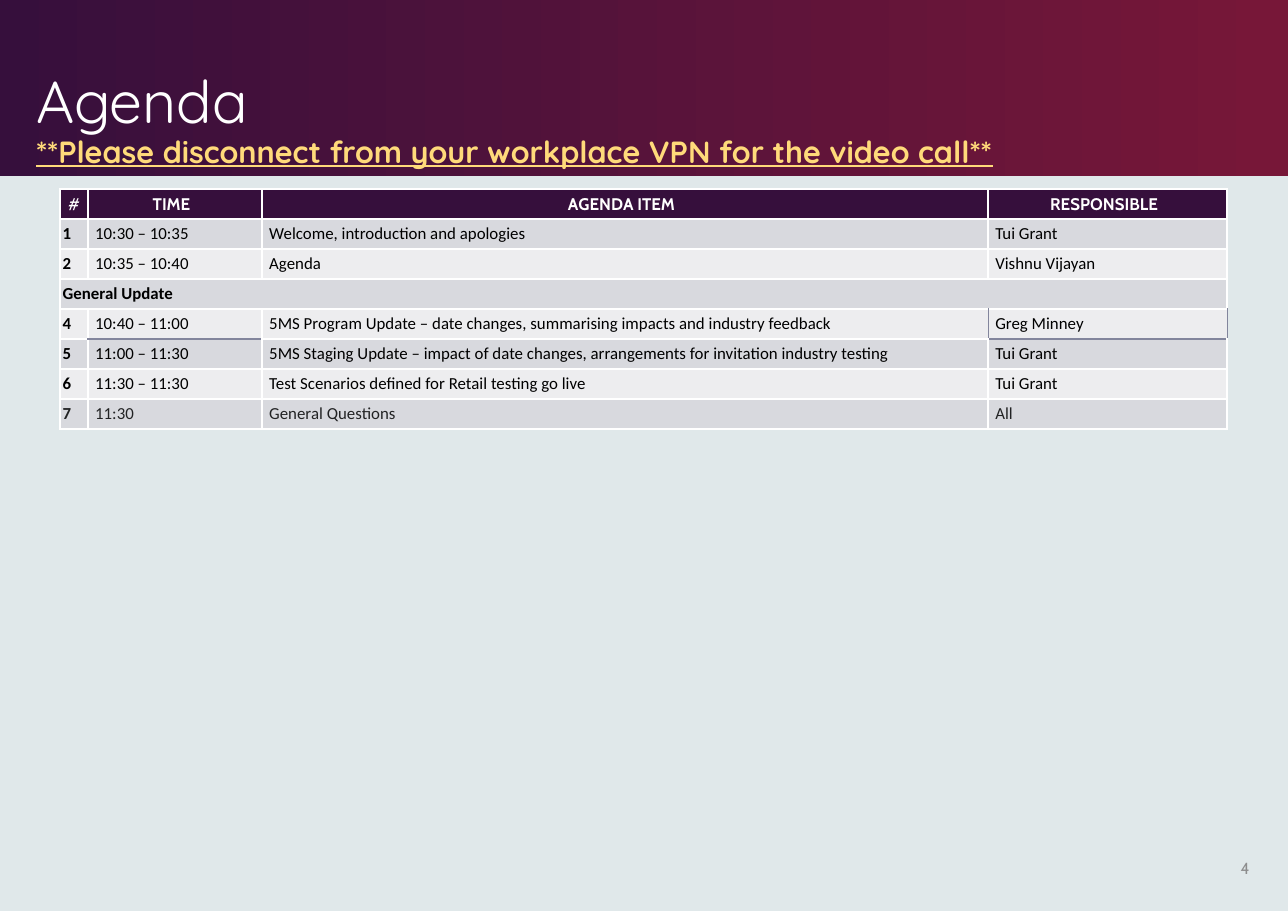
from dataclasses import dataclass

from lxml.etree import SubElement
from pptx import Presentation
from pptx.dml.color import RGBColor
from pptx.enum.shapes import MSO_SHAPE
from pptx.enum.text import MSO_ANCHOR, PP_ALIGN
from pptx.oxml.ns import qn
from pptx.util import Pt


@dataclass(frozen=True)
class Theme:
    background: str = "E0E8EA"
    plum: str = "360F3C"
    wine: str = "771738"
    white: str = "FFFFFF"
    gold: str = "FFDA7A"
    black: str = "000000"
    charcoal: str = "222324"
    page_grey: str = "8D8D8E"
    rule_grey: str = "82859C"
    band_dark: str = "D8D9DE"
    band_light: str = "EDEDEF"
    heading_font: str = "Quicksand"
    label_font: str = "Cabin"
    body_font: str = "Calibri"
    title_size: float = 38.6
    notice_size: float = 20
    cell_size: float = 11
    page_size: float = 10.5


THEME = Theme()
SLIDE_W, SLIDE_H = 841.68, 595.44
COLUMNS = (18.72, 113.76, 474.48, 156.24)
HEADERS = ("#", "TIME", "AGENDA ITEM", "RESPONSIBLE")
AGENDA = (
    ("1", "10:30 – 10:35", "Welcome, introduction and apologies", "Tui Grant"),
    ("2", "10:35 – 10:40", "Agenda", "Vishnu Vijayan"),
    ("General Update",),
    ("4", "10:40 – 11:00", "5MS Program Update – date changes, summarising impacts and industry feedback", "Greg Minney"),
    ("5", "11:00 – 11:30", "5MS Staging Update – impact of date changes, arrangements for invitation industry testing", "Tui Grant"),
    ("6", "11:30 – 11:30", "Test Scenarios defined for Retail testing go live", "Tui Grant"),
    ("7", "11:30", "General Questions", "All"),
)
GREY_EDGES = {(4, 1): "B", (5, 1): "T", (4, 2): "R", (4, 3): "LRB", (5, 3): "T"}


def add_text(p, text, font, size, color, bold=False, underline=False, align=None):
    if align is not None:
        p.alignment = align
    r = p.add_run()
    r.text = text
    r.font.name = font
    r.font.size = Pt(size)
    r.font.color.rgb = RGBColor.from_string(color)
    r.font.bold = bold
    r.font.underline = underline


def add_box(s, left, top, width, height, anchor):
    tf = s.shapes.add_textbox(Pt(left), Pt(top), Pt(width), Pt(height)).text_frame
    tf.word_wrap = True
    tf.vertical_anchor = anchor
    return tf.paragraphs[0]


def add_header(s, left, top, width, height):
    sp = s.shapes.add_shape(MSO_SHAPE.RECTANGLE, Pt(left), Pt(top), Pt(width), Pt(height))
    sp.shadow.inherit = False
    sp.line.fill.background()
    sp.fill.gradient()
    sp.fill.gradient_angle = 0
    for stop, color, position in zip(sp.fill.gradient_stops, (THEME.plum, THEME.wine), (0, 0.99)):
        stop.color.rgb = RGBColor.from_string(color)
        stop.position = position

    p = add_box(s, left + 16.5, top + 11.5, width - 33.8, height - 12.2, MSO_ANCHOR.BOTTOM)
    p.line_spacing = 0.9
    add_text(p, "Agenda", THEME.heading_font, THEME.title_size, THEME.white)
    p.add_line_break()
    add_text(p, "**Please disconnect from your workplace VPN for the video call**",
             THEME.heading_font, THEME.notice_size, THEME.gold, bold=True, underline=True)


def format_cell(cell, fill, margins, grey_edges=""):
    tcPr = cell._tc.get_or_add_tcPr()
    for edge in "LRTB":
        grey = edge in grey_edges
        ln = SubElement(tcPr, qn(f"a:ln{edge}"), w=str(Pt(1 if grey else 1.5)))
        solid = SubElement(ln, qn("a:solidFill"))
        SubElement(solid, qn("a:srgbClr"), val=THEME.rule_grey if grey else THEME.white)
    cell.fill.solid()
    cell.fill.fore_color.rgb = RGBColor.from_string(fill)
    cell.vertical_anchor = MSO_ANCHOR.MIDDLE
    cell.margin_left, cell.margin_top, cell.margin_right, cell.margin_bottom = map(Pt, margins)


def add_agenda(s, left, top, width, height):
    rows = len(AGENDA) + 1
    table = s.shapes.add_table(rows, len(COLUMNS), Pt(left), Pt(top), Pt(width), Pt(height)).table
    table.first_row = table.horz_banding = False
    for column, w in zip(table.columns, COLUMNS):
        column.width = Pt(w)
    for row in table.rows:
        row.height = Pt(height / rows)

    for i, label in enumerate(HEADERS):
        cell = table.cell(0, i)
        format_cell(cell, THEME.plum, (0, 0, 5, 0) if i else (2, 2, 2, 2))
        add_text(cell.text_frame.paragraphs[0], label, THEME.label_font, THEME.cell_size,
                 THEME.white, bold=i > 0, align=PP_ALIGN.CENTER)

    for i, entry in enumerate(AGENDA, 1):
        fill = THEME.band_dark if i % 2 else THEME.band_light
        color = THEME.charcoal if i == len(AGENDA) else THEME.black
        for j in range(len(COLUMNS)):
            format_cell(table.cell(i, j), fill, (4.5, 2, 4.5, 2) if j else (2, 2, 2, 2),
                        GREY_EDGES.get((i, j), ""))
        if len(entry) == 1:
            table.cell(i, 0).merge(table.cell(i, len(COLUMNS) - 1))
        for j, text in enumerate(entry):
            add_text(table.cell(i, j).text_frame.paragraphs[0], text, THEME.body_font,
                     THEME.cell_size, color, bold=j == 0)


def add_page_number(s, left, top, width, height):
    p = add_box(s, left, top, width, height, MSO_ANCHOR.MIDDLE)
    add_text(p, "4", THEME.label_font, THEME.page_size, THEME.page_grey, align=PP_ALIGN.RIGHT)


def main():
    prs = Presentation()
    prs.slide_width, prs.slide_height = Pt(SLIDE_W), Pt(SLIDE_H)
    s = prs.slides.add_slide(prs.slide_layouts[6])
    s.background.fill.solid()
    s.background.fill.fore_color.rgb = RGBColor.from_string(THEME.background)
    add_header(s, 0, 0, SLIDE_W, 115.2)
    add_agenda(s, 39, 123.6, sum(COLUMNS), 157)
    add_page_number(s, 784, 551.5, 39.6, 31.7)
    prs.save("out.pptx")


if __name__ == "__main__":
    main()
